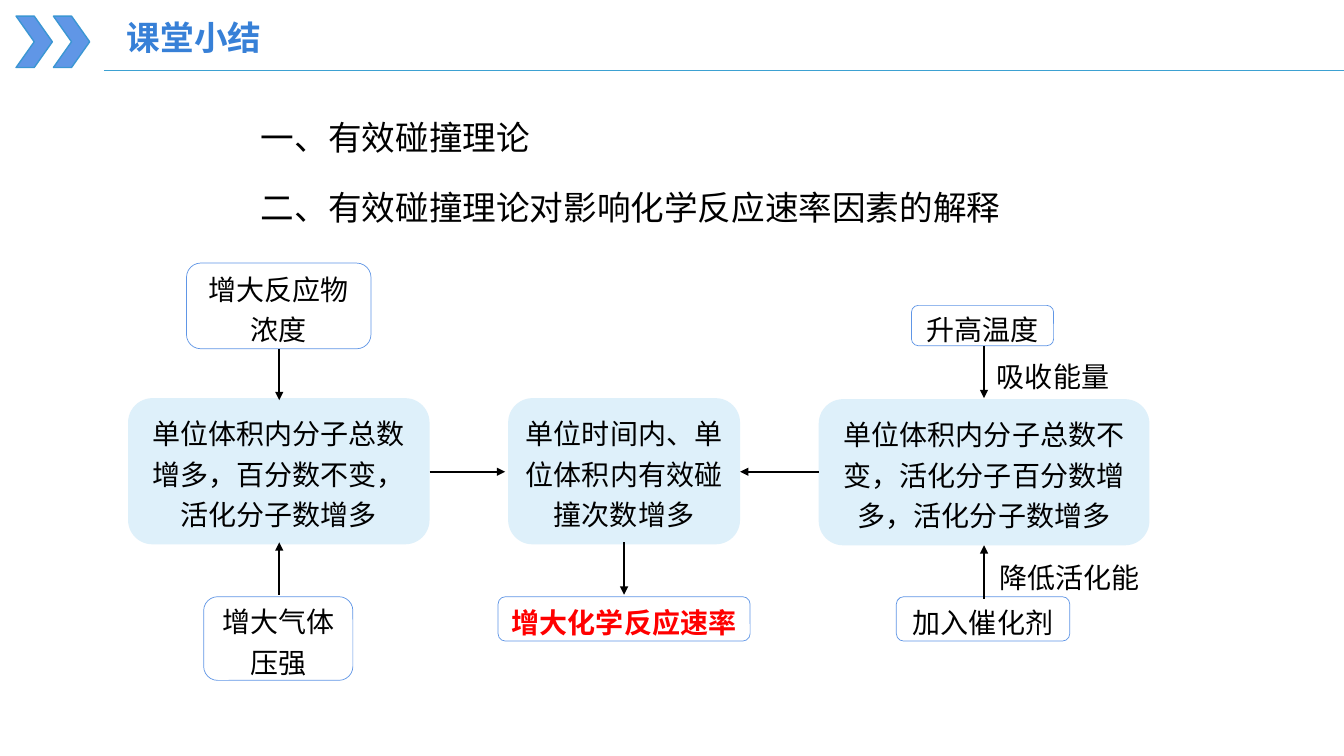
from lxml.etree import SubElement
from pptx import Presentation
from pptx.dml.color import RGBColor as Rgb
from pptx.enum.shapes import MSO_CONNECTOR as Link, MSO_SHAPE as Kind
from pptx.enum.text import MSO_ANCHOR as Anchor, PP_ALIGN as Align
from pptx.oxml.ns import qn
from pptx.util import Emu, Pt

SCALE = 9144  # 100 px to the inch
FONT = "Noto Sans CJK SC"
BLACK, RED, BLUE, PALE = "000000", "FF0000", "6096E6", "DEF0FA"


def px(*sizes):
    return [Emu(size * SCALE) for size in sizes]


def paint(target, color):
    target.rgb = Rgb.from_string(color)


def write(frame, text, size, color=BLACK, bold=False):
    frame.word_wrap = True
    para = frame.paragraphs[0]
    para.text = text
    font = para.font
    font.size, font.bold, font.name = Pt(size), bold, FONT
    paint(font.color, color)
    SubElement(para._p.pPr.find(qn("a:defRPr")), qn("a:ea"), typeface=FONT)
    return para


def add_text(slide, box, text, color=BLACK, bold=False):
    frame = slide.shapes.add_textbox(*px(*box)).text_frame
    write(frame, text, 24, color, bold)


def add_form(slide, kind, box, fill=None, line=None, width=0.5):
    form = slide.shapes.add_shape(kind, *px(*box))
    form.shadow.inherit = False
    if fill:
        form.fill.solid()
        paint(form.fill.fore_color, fill)
    else:
        form.fill.background()
    if line:
        paint(form.line.color, line)
        form.line.width = Pt(width)
    else:
        form.line.fill.background()
    return form


def add_box(slide, box, text, fill=None, line=None, color=BLACK, bold=False):
    form = add_form(slide, Kind.ROUNDED_RECTANGLE, box, fill, line)
    frame = form.text_frame
    frame.vertical_anchor = Anchor.TOP if fill else Anchor.MIDDLE
    para = write(frame, text, 20, color, bold)
    para.alignment, para.line_spacing = Align.CENTER, 1.2


def add_line(slide, ends, color, width, arrow=False):
    line = slide.shapes.add_connector(Link.STRAIGHT, *px(*ends))
    paint(line.line.color, color)
    line.line.width = Pt(width)
    if arrow:
        SubElement(line.line._get_or_add_ln(), qn("a:tailEnd"), type="triangle")
    SubElement(line._element.spPr, qn("a:effectLst"))


def main():
    deck = Presentation()
    deck.slide_width, deck.slide_height = px(1333, 750)
    slide = deck.slides.add_slide(deck.slide_layouts[6])

    # Header
    for left in (16, 53):
        add_form(slide, Kind.CHEVRON, (left, 16, 36, 51), BLUE, "3B96D3", 1)
    add_line(slide, (103, 70, 1333, 70), "3DA1D2", 0.5)
    add_text(slide, (116, 12, 184, 50), "课堂小结", "3780D7", True)

    # Headings
    add_text(slide, (249, 111, 355, 50), "一、有效碰撞理论")
    add_text(slide, (249, 181, 791, 50),
             "二、有效碰撞理论对影响化学反应速率因素的解释")

    # Causes
    for box, text in (
        ((185, 261, 183, 85), "增大反应物浓度"),
        ((202, 592, 148, 83), "增大气体压强"),
        ((904, 303, 141, 40), "升高温度"),
        ((889, 592, 172, 44), "加入催化剂"),
    ):
        add_box(slide, box, text, line=BLUE)

    # Explanations
    for box, text in (
        ((127, 395, 299, 145), "单位体积内分子总数增多，百分数不变，活化分子数增多"),
        ((504, 395, 230, 145), "单位时间内、单位体积内有效碰撞次数增多"),
        ((812, 396, 328, 145),
         "单位体积内分子总数不变，活化分子百分数增多，活化分子数增多"),
    ):
        add_box(slide, box, text, fill=PALE)

    # Result
    add_box(slide, (494, 592, 250, 44), "增大化学反应速率",
            line=BLUE, color=RED, bold=True)

    # Arrow labels
    add_box(slide, (961, 348, 167, 44), "吸收能量")
    add_box(slide, (971, 547, 179, 44), "降低活化能")

    # Arrows
    for ends in (
        (277, 346, 277, 397), (277, 590, 277, 538),
        (976, 343, 976, 395), (976, 594, 976, 541),
        (426, 468, 501, 468), (812, 468, 734, 468),
        (619, 538, 619, 590),
    ):
        add_line(slide, ends, BLACK, 1.75, True)

    deck.save("out.pptx")


if __name__ == "__main__":
    main()
